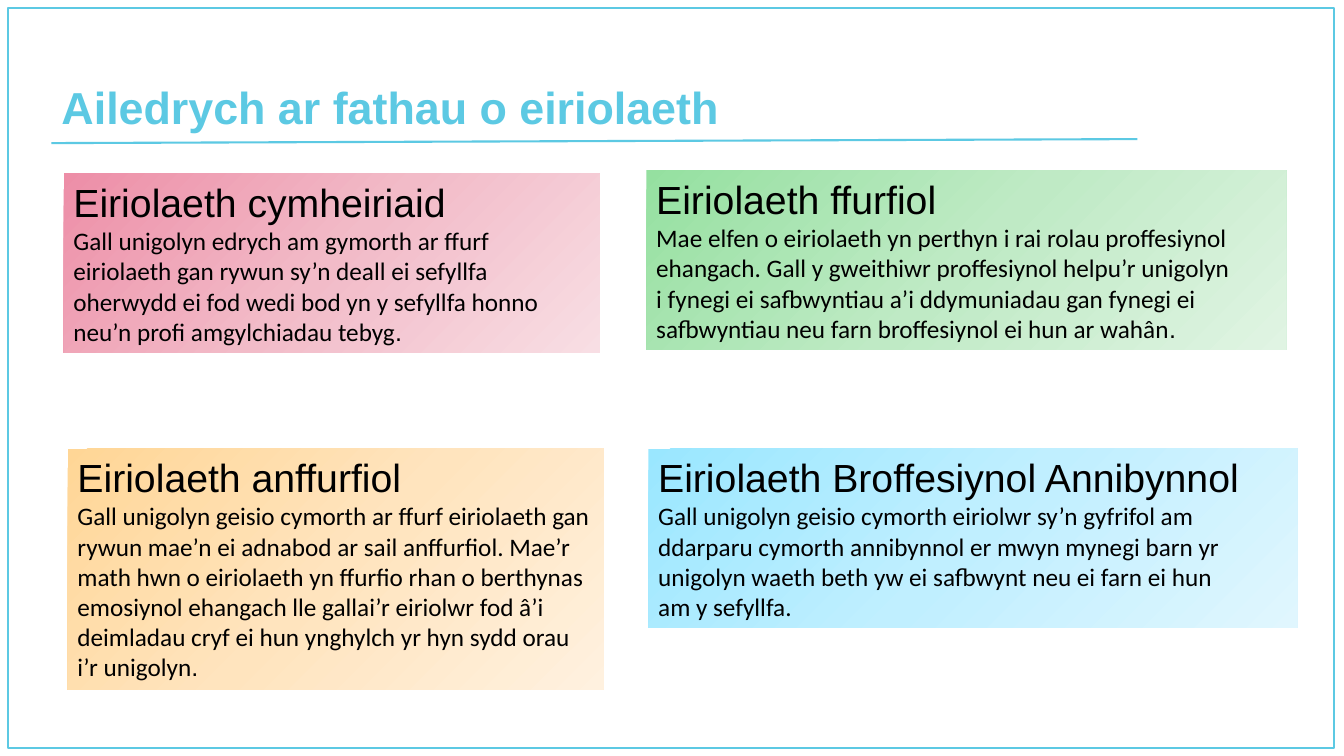
from copy import deepcopy

from lxml.etree import SubElement
from pptx import Presentation
from pptx.dml.color import RGBColor
from pptx.enum.shapes import MSO_CONNECTOR, MSO_SHAPE
from pptx.enum.text import MSO_ANCHOR, MSO_AUTO_SIZE, PP_ALIGN
from pptx.oxml.ns import qn
from pptx.util import Inches, Pt

# Content: heading, body pieces as (text, font), gradient name, place
TITLE = "Ailedrych ar fathau o eiriolaeth"
CARDS = [
    ("Eiriolaeth cymheiriaid",
     [("Gall unigolyn edrych am gymorth ar ffurf eiriolaeth gan rywun sy’n deall "
       "ei sefyllfa oherwydd ei fod wedi bod yn y sefyllfa honno neu’n profi "
       "amgylchiadau tebyg", "Calibri"), (".", "Arial")],
     "pink", (0.63, 1.72, 5.32, 1.78)),
    ("Eiriolaeth ffurfiol",
     [("Mae elfen o eiriolaeth yn perthyn i rai rolau proffesiynol ehangach. Gall y "
       "gweithiwr proffesiynol helpu’r unigolyn\ni fynegi ei safbwyntiau a’i "
       "ddymuniadau gan fynegi ei safbwyntiau neu farn broffesiynol ei hun ar wahân",
       "Calibri"), (".", "Arial")],
     "green", (6.41, 1.69, 6.35, 1.78)),
    ("Eiriolaeth anffurfiol",
     [("Gall unigolyn geisio cymorth ar ffurf eiriolaeth gan rywun mae’n ei adnabod "
       "ar sail anffurfiol. Mae’r math hwn o eiriolaeth yn ffurfio rhan o berthynas "
       "emosiynol ehangach lle gallai’r eiriolwr fod â’i deimladau cryf ei hun "
       "ynghylch yr hyn sydd orau i’r unigolyn", "Calibri"), (".", "Arial")],
     "orange", (0.67, 4.45, 5.32, 2.39)),
    ("Eiriolaeth Broffesiynol Annibynnol",
     [("Gall unigolyn geisio cymorth eiriolwr sy’n gyfrifol am ddarparu cymorth "
       "annibynnol er mwyn mynegi barn yr unigolyn waeth beth yw ei safbwynt neu ei "
       "farn ei hun\nam y sefyllfa.", "Calibri")],
     "blue", (6.43, 4.45, 6.44, 1.78)),
]
COLORS = {"accent": "5CC9E3", "text": "000000"}
GRADIENTS = {
    "pink": ("ED8EA7", "F2BBC8", "F8DEE4"),
    "green": ("95E0A0", "BFEAC5", "E0F4E3"),
    "orange": ("FFD696", "FFE4BE", "FFF1DF"),
    "blue": ("9AE7FF", "C0EFFF", "E0F6FE"),
}
FORMATS = {
    "title": {"size": Pt(32), "bold": True},
    "heading": {"size": Pt(28)},
    "body": {"size": Pt(18)},
}
WIDTH, HEIGHT, MARGIN = 13.33, 7.5, 0.08


def add_span(para, text, style, font="Arial", color="text"):
    for index, line in enumerate(text.split("\n")):
        if index:
            para.add_line_break()
        span = para.add_run()
        span.text = line
        for name, value in FORMATS[style].items():
            setattr(span.font, name, value)
        span.font.name = font
        span.font.color.rgb = RGBColor.from_string(COLORS[color])


def set_line(line, width):
    line.color.rgb = RGBColor.from_string(COLORS["accent"])
    line.width = Pt(width)


def set_gradient(fill, colors):
    fill.gradient()
    fill.gradient_angle = 315
    first = fill.gradient_stops[0]._gs
    first.addnext(deepcopy(first))
    for index, (stop, color) in enumerate(zip(fill.gradient_stops, colors)):
        stop.position = index / (len(colors) - 1)
        stop.color.rgb = RGBColor.from_string(color)


deck = Presentation()
deck.slide_width, deck.slide_height = Inches(WIDTH), Inches(HEIGHT)
page = deck.slides.add_slide(deck.slide_layouts[5])

# Page frame and rule under the title
frame = page.shapes.add_shape(
    MSO_SHAPE.RECTANGLE, Inches(MARGIN), Inches(MARGIN),
    Inches(WIDTH - 2 * MARGIN - 0.02), Inches(HEIGHT - 2 * MARGIN))
frame.shadow.inherit = False
frame.fill.background()
set_line(frame.line, 1)
rule = page.shapes.add_connector(
    MSO_CONNECTOR.STRAIGHT, Inches(0.51), Inches(1.42), Inches(11.28), Inches(1.38))
SubElement(rule._element.spPr, qn("a:effectLst"))
set_line(rule.line, 1.5)

# Title
title = page.shapes.title
title.left, title.top, title.width, title.height = map(Inches, (0.51, 0.29, 7.8, 1.09))
title.text_frame.vertical_anchor = MSO_ANCHOR.BOTTOM
title.text_frame.auto_size = MSO_AUTO_SIZE.NONE
para = title.text_frame.paragraphs[0]
para.alignment, para.line_spacing = PP_ALIGN.LEFT, 0.9
add_span(para, TITLE, "title", color="accent")

# Advocacy cards
for heading, body, gradient, place in CARDS:
    box = page.shapes.add_shape(MSO_SHAPE.RECTANGLE, *map(Inches, place))
    box.shadow.inherit = False
    box.line.fill.background()
    set_gradient(box.fill, GRADIENTS[gradient])
    frame_text = box.text_frame
    frame_text.word_wrap = True
    frame_text.auto_size = MSO_AUTO_SIZE.SHAPE_TO_FIT_TEXT
    frame_text.vertical_anchor = MSO_ANCHOR.TOP
    add_span(frame_text.paragraphs[0], heading, "heading")
    body_para = frame_text.add_paragraph()
    for text, font in body:
        add_span(body_para, text, "body", font)
    for para in frame_text.paragraphs:
        para.alignment = PP_ALIGN.LEFT

deck.save("out.pptx")
